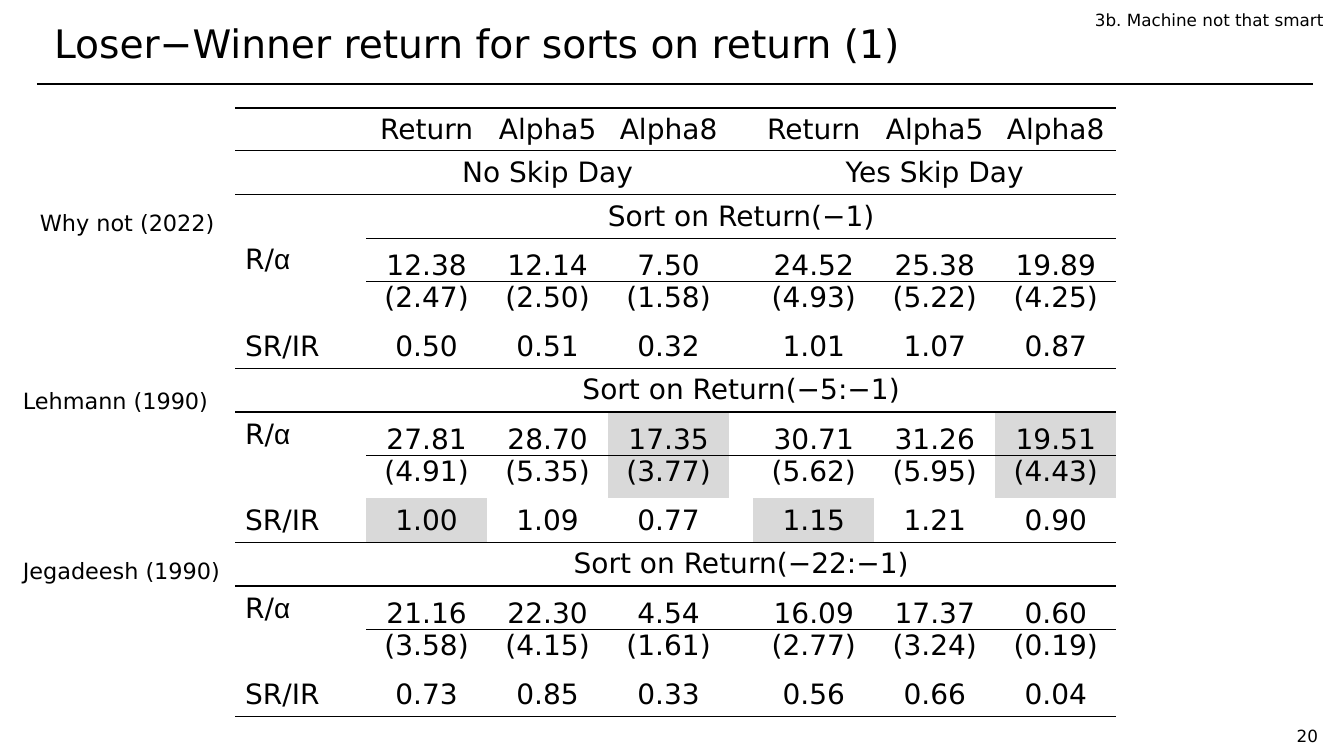
from lxml import etree
from pptx import Presentation, util as u
from pptx.dml.color import RGBColor
from pptx.enum import shapes, text
from pptx.oxml.ns import qn

INK, PAPER, SHADE = "000000", "FFFFFF", "D9D9D9"
NO_STYLE = "{2D5ABB26-0587-4C30-8999-92F81FD0307C}"
LEFT, CENTER, RIGHT = text.PP_ALIGN.LEFT, text.PP_ALIGN.CENTER, text.PP_ALIGN.RIGHT
TOP, MIDDLE, BOTTOM = text.MSO_ANCHOR.TOP, text.MSO_ANCHOR.MIDDLE, text.MSO_ANCHOR.BOTTOM

HEADINGS = ["Return", "Alpha5", "Alpha8"]
VALUE_COLUMNS = [2, 3, 4, 6, 7, 8]
COLUMN_WIDTHS = [107, 24, 121, 121, 121, 24, 121, 121, 121]
ROW_COUNT = 14
BLOCKS = [
    ("Sort on Return(−1)",
     ["12.38", "12.14", "7.50", "24.52", "25.38", "19.89"],
     ["(2.47)", "(2.50)", "(1.58)", "(4.93)", "(5.22)", "(4.25)"],
     ["0.50", "0.51", "0.32", "1.01", "1.07", "0.87"]),
    ("Sort on Return(−5:−1)",
     ["27.81", "28.70", "17.35", "30.71", "31.26", "19.51"],
     ["(4.91)", "(5.35)", "(3.77)", "(5.62)", "(5.95)", "(4.43)"],
     ["1.00", "1.09", "0.77", "1.15", "1.21", "0.90"]),
    ("Sort on Return(−22:−1)",
     ["21.16", "22.30", "4.54", "16.09", "17.37", "0.60"],
     ["(3.58)", "(4.15)", "(1.61)", "(2.77)", "(3.24)", "(0.19)"],
     ["0.73", "0.85", "0.33", "0.56", "0.66", "0.04"]),
]
SHADED = {(7, 4), (8, 4), (7, 8), (8, 8), (9, 2), (9, 6)}


def px(length):
    return u.Emu(round(length * 914400 / 100.8))


def color(value):
    return RGBColor.from_string(value)


class SlideBuilder:
    font_name = "DejaVu Sans"

    def __init__(self, slide):
        self.slide = slide

    def format(self, paragraph, size, align):
        paragraph.alignment = align
        paragraph.font.name = self.font_name
        paragraph.font.size = u.Pt(size)
        paragraph.font.color.rgb = color(INK)

    def title(self, words, left, top, width, height):
        shape = self.slide.shapes.title
        shape.left, shape.top, shape.width, shape.height = map(px, (left, top, width, height))
        shape.text_frame.text = words
        shape.text_frame.vertical_anchor = MIDDLE
        self.format(shape.text_frame.paragraphs[0], 28, LEFT)

    def label(self, words, left, top, width, height, size, align=LEFT, anchor=TOP):
        shape = self.slide.shapes.add_textbox(*map(px, (left, top, width, height)))
        frame = shape.text_frame
        frame.word_wrap = True
        frame.vertical_anchor = anchor
        frame.text = words
        self.format(frame.paragraphs[0], size, align)

    def rule(self, left, top, right):
        line = self.slide.shapes.add_connector(
            shapes.MSO_CONNECTOR.STRAIGHT, px(left), px(top), px(right), px(top))
        line.line.color.rgb = color(INK)
        line.line.width = u.Pt(1)
        etree.SubElement(line._element.spPr, qn("a:effectLst"))

    def table(self, left, top, height):
        frame = self.slide.shapes.add_table(
            ROW_COUNT, len(COLUMN_WIDTHS), px(left), px(top), px(sum(COLUMN_WIDTHS)), px(height))
        table = frame.table
        table.first_row = table.horz_banding = False
        table._tbl.tblPr.find(qn("a:tableStyleId")).text = NO_STYLE
        for column, width in zip(table.columns, COLUMN_WIDTHS):
            column.width = px(width)
        for row in table.rows:
            row.height = px(height / ROW_COUNT)
        return table

    def cell(self, cell, words, align=CENTER, anchor=MIDDLE, tight=False):
        """Write a cell; tight drops its insets, and a Greek alpha is set in Arial."""
        cell.vertical_anchor = anchor
        if tight:
            cell.margin_left = cell.margin_right = cell.margin_top = cell.margin_bottom = 0
        paragraph = cell.text_frame.paragraphs[0]
        self.format(paragraph, 20, align)
        before, alpha, _ = words.partition("α")
        paragraph.add_run().text = before
        if alpha:
            run = paragraph.add_run()
            run.text = alpha
            run.font.name = "Arial"

    def border(self, cell, side):
        line = etree.SubElement(cell._tc.get_or_add_tcPr(), qn(f"a:ln{side}"), w=str(u.Pt(1)))
        fill = etree.SubElement(line, qn("a:solidFill"))
        etree.SubElement(fill, qn("a:srgbClr"), val=INK)

    def values(self, table, row, words, anchor=MIDDLE):
        for column, value in zip(VALUE_COLUMNS, words):
            self.cell(table.cell(row, column), value, anchor=anchor, tight=True)

    def span(self, table, row, first, last, words):
        table.cell(row, first).merge(table.cell(row, last))
        self.cell(table.cell(row, first), words)


def ruled_columns(row):
    """Columns with a rule along the row's bottom edge; row -1 is the table's top."""
    if row in (-1, 0) or row % 4 == 1 and row > 1:
        return range(9)
    if row == 1:
        return VALUE_COLUMNS
    return range(2, 9) if row % 4 == 2 else ()


def fill_returns(builder, table):
    builder.values(table, 0, HEADINGS * 2)
    builder.span(table, 1, 2, 4, "No Skip Day")
    builder.span(table, 1, 6, 8, "Yes Skip Day")
    for index, (heading, returns, t_values, ratios) in enumerate(BLOCKS):
        row = 2 + 4 * index
        builder.span(table, row, 2, 8, heading)
        builder.cell(table.cell(row + 1, 0), "R/α", LEFT, BOTTOM if index else TOP)
        builder.values(table, row + 1, returns, BOTTOM)
        builder.values(table, row + 2, t_values, TOP)
        builder.cell(table.cell(row + 3, 0), "SR/IR", LEFT)
        builder.values(table, row + 3, ratios)
    for row in range(ROW_COUNT):
        for column in range(len(COLUMN_WIDTHS)):
            cell = table.cell(row, column)
            for side, edge in (("T", row - 1), ("B", row)):
                if column in ruled_columns(edge):
                    builder.border(cell, side)
            cell.fill.solid()
            cell.fill.fore_color.rgb = color(SHADE if (row, column) in SHADED else PAPER)


def main():
    presentation = Presentation()
    presentation.slide_width, presentation.slide_height = px(1344), px(756)
    builder = SlideBuilder(presentation.slides.add_slide(presentation.slide_layouts[5]))
    builder.rule(37, 84, 1313)
    builder.title("Loser−Winner return for sorts on return (1)", 44, 5, 1252, 76)
    builder.label("20", 1254, 721, 74, 30, 12, RIGHT, BOTTOM)
    fill_returns(builder, builder.table(235, 108, 598))
    builder.label("Lehmann (1990)", 13, 382, 211, 37, 16)
    builder.label("Jegadeesh (1990)", 13, 552, 225, 37, 16)
    builder.label("Why not (2022)", 30, 204, 201, 37, 16)
    builder.label("3b. Machine not that smart", 1085, 5, 254, 31, 12)
    presentation.save("out.pptx")


if __name__ == "__main__":
    main()
